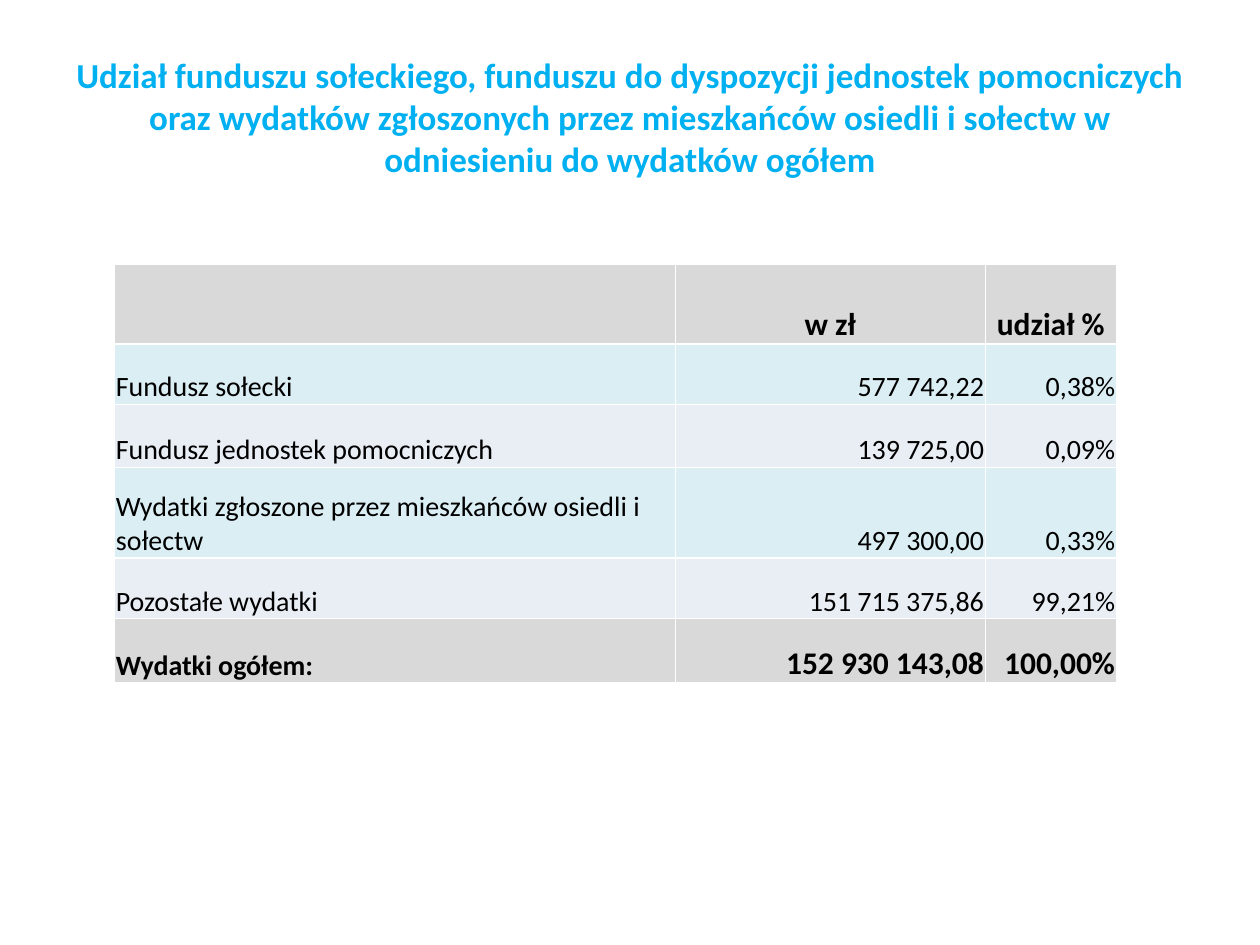
from lxml import etree
from pptx import Presentation
from pptx.dml.color import RGBColor
from pptx.enum.text import MSO_ANCHOR, PP_ALIGN
from pptx.oxml.ns import qn
from pptx.util import Inches, Pt

LEFT, MID, RIGHT = PP_ALIGN.LEFT, PP_ALIGN.CENTER, PP_ALIGN.RIGHT
CENTRE, BOTTOM = MSO_ANCHOR.MIDDLE, MSO_ANCHOR.BOTTOM

# Content
TITLE = ("Udział funduszu sołeckiego, funduszu do dyspozycji jednostek "
         "pomocniczych oraz wydatków zgłoszonych przez mieszkańców osiedli "
         "i sołectw w odniesieniu do wydatków ogółem")
ROWS = [
    ("", "w zł", "udział %"),
    ("Fundusz sołecki", "577 742,22", "0,38%"),
    ("Fundusz jednostek pomocniczych", "139 725,00", "0,09%"),
    ("Wydatki zgłoszone przez mieszkańców osiedli i sołectw",
     "497 300,00", "0,33%"),
    ("Pozostałe wydatki", "151 715 375,86", "99,21%"),
    ("Wydatki ogółem:", "152 930 143,08", "100,00%"),
]
WIDTHS = [4.45, 2.46, 1.04]
HEIGHTS = [0.63, 0.48, 0.5, 0.72, 0.48, 0.51]
GREY, BANDS = "D9D9D9", ("E9EDF4", "DBEEF4")
INSETS = {"margin_left": 0.01, "margin_right": 0.01,
          "margin_top": 0.01, "margin_bottom": 0}


def color(code):
    return RGBColor.from_string(code)


def write(frame, text, size, bold, code, align):
    frame.text = text
    para = frame.paragraphs[0]
    para.alignment = align
    look = {"name": "Calibri", "size": Pt(size), "bold": bold}
    for run in para.runs:
        for key, value in look.items():
            setattr(run.font, key, value)
        run.font.color.rgb = color(code)


def paint(cell, code):
    # Borders come before the fill in the cell properties
    props = cell._tc.get_or_add_tcPr()
    for side in ("lnL", "lnR", "lnT", "lnB"):
        line = etree.SubElement(props, qn("a:" + side), w=str(Pt(1)))
        solid = etree.SubElement(line, qn("a:solidFill"))
        etree.SubElement(solid, qn("a:srgbClr"), val="FFFFFF")
    cell.fill.solid()
    cell.fill.fore_color.rgb = color(code)


prs = Presentation()
prs.slide_width, prs.slide_height = Inches(10), Inches(7.5)
slide = prs.slides.add_slide(prs.slide_layouts[5])

# Title
title = slide.shapes.title
title.left, title.top = Inches(0.5), Inches(0.3)
title.width, title.height = Inches(9), Inches(1.25)
title.text_frame.word_wrap = True
title.text_frame.vertical_anchor = CENTRE
write(title.text_frame, TITLE, 20, True, "00B0F0", MID)

# Table
table = slide.shapes.add_table(
    len(ROWS), len(WIDTHS), Inches(0.91), Inches(2.1),
    Inches(sum(WIDTHS)), Inches(sum(HEIGHTS))).table
for col, width in zip(table.columns, WIDTHS):
    col.width = Inches(width)
for row, height in zip(table.rows, HEIGHTS):
    row.height = Inches(height)

# Cells: grey bold header and total, banded rows between
last = len(ROWS) - 1
for r, row in enumerate(ROWS):
    edge = r in (0, last)
    for c, text in enumerate(row):
        cell = table.cell(r, c)
        paint(cell, GREY if edge else BANDS[r % 2])
        cell.vertical_anchor = BOTTOM
        for key, value in INSETS.items():
            setattr(cell, key, Inches(value))
        align = MID if r == 0 else RIGHT if c else LEFT
        write(cell.text_frame, text, 18 if edge and c else 16, edge,
              "000000", align)

prs.save("out.pptx")
